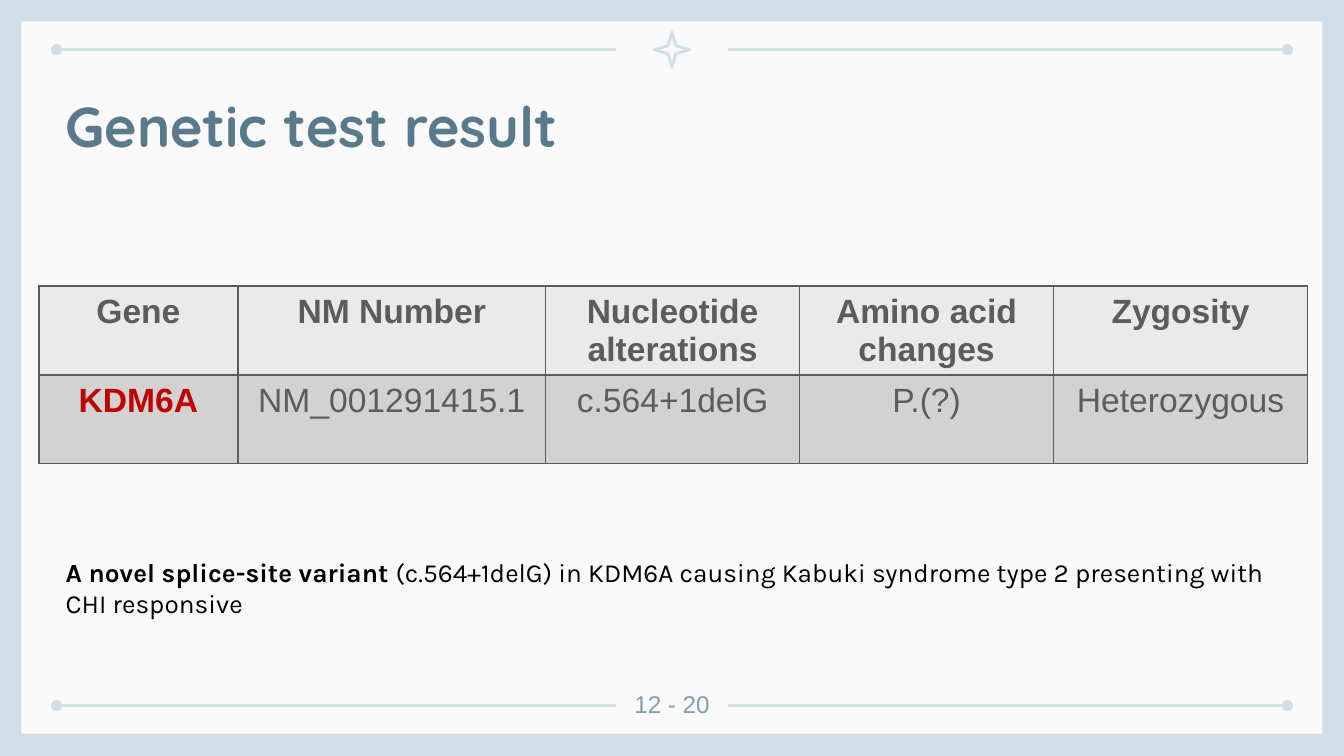
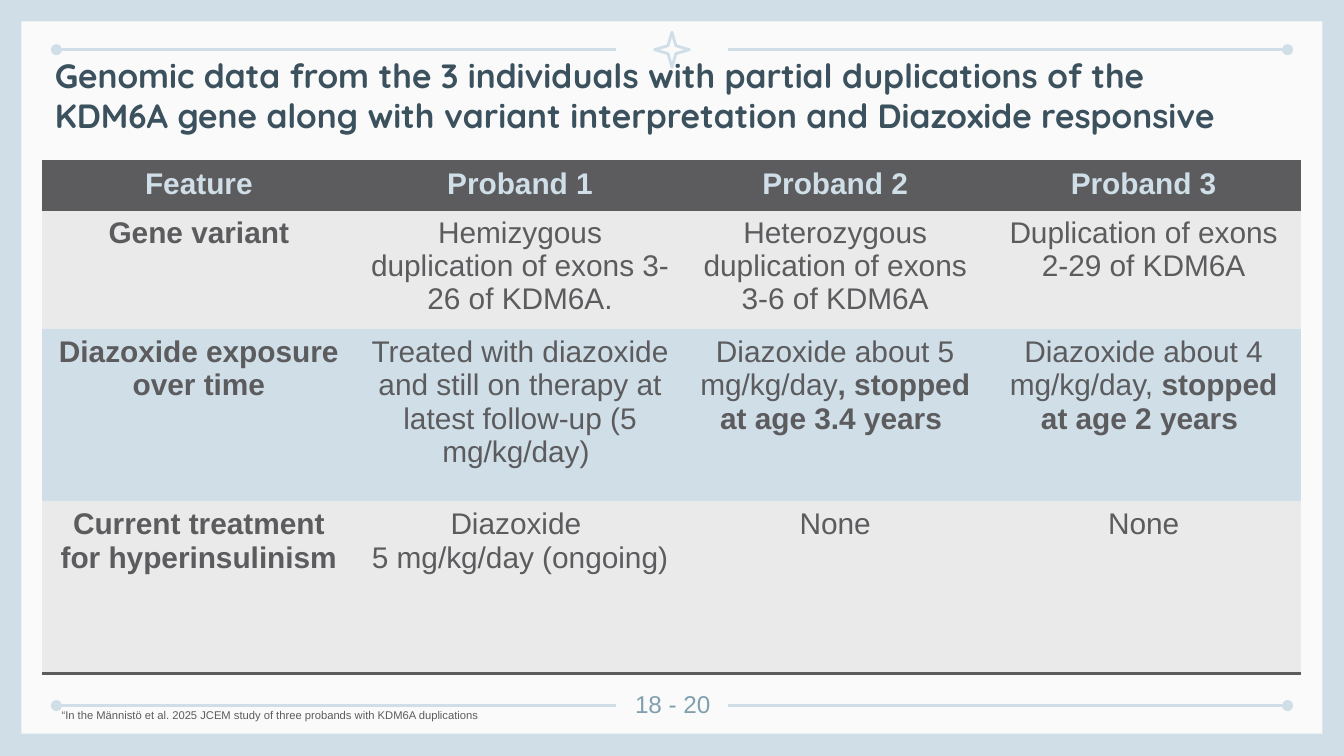
from dataclasses import dataclass
from lxml import etree
from pptx import Presentation
from pptx.dml.color import RGBColor
from pptx.enum.shapes import MSO_CONNECTOR, MSO_SHAPE
from pptx.enum.text import PP_ALIGN
from pptx.oxml.ns import qn
from pptx.util import Pt

LEFT, MID = PP_ALIGN.LEFT, PP_ALIGN.CENTER
LINE = MSO_CONNECTOR.STRAIGHT
RECT, STAR = MSO_SHAPE.RECTANGLE, MSO_SHAPE.STAR_4_POINT
PX = 9144
WIDE = 1000 * PX
NO_STYLE = "{2D5ABB26-0587-4C30-8999-92F81FD0307C}"


@dataclass(frozen=True)
class Theme:
    sky: str = "CFDEE7"
    paper: str = "FAFAFA"
    steel: str = "587A8B"
    navy: str = "3B515D"
    mist: str = "809FAF"
    gray: str = "5C5C5F"
    pale: str = "EAEAEA"
    dim: str = "D2D2D2"
    red: str = "C00000"
    black: str = "000000"
    sans: str = "Arial"
    head: str = "Quicksand"
    body: str = "Karla"
    big: int = 30
    mid: int = 18
    cell: int = 16
    text: int = 14
    page: int = 13
    note: int = 6
    rule: float = 1.5


T = Theme()
rgb = RGBColor.from_string


def write(frame, text, size, ink, font=T.sans, bold=False, align=LEFT):
    frame.word_wrap = True
    for i, line in enumerate(text.split("\n")):
        para = frame.add_paragraph() if i else frame.paragraphs[0]
        para.alignment = align
        for j, part in enumerate(line.split("|")):
            if part:
                run = para.add_run()
                run.text = part
                run.font.size = Pt(size)
                run.font.name = font
                run.font.bold = bold != (j % 2 == 1)
                run.font.color.rgb = rgb(ink)


def grid(slide, x, y, cols, rows, data, fills, inks, size, edges, width):
    box = slide.shapes.add_table(len(rows), len(cols), x * PX, y * PX,
                                 sum(cols) * PX, sum(rows) * PX)
    table = box.table
    table.first_row = table.horz_banding = False
    table._tbl.tblPr.find(qn("a:tableStyleId")).text = NO_STYLE
    for c, wide in enumerate(cols):
        table.columns[c].width = wide * PX
    top, key, rest = inks
    for r, high in enumerate(rows):
        table.rows[r].height = high * PX
        for c, text in enumerate(data[r]):
            cell = table.cell(r, c)
            cell.margin_bottom = 0
            ink = top if r == 0 else key if c == 0 else rest
            write(cell.text_frame, text, size, ink, bold=r == 0 or c == 0, align=MID)
            props = cell._tc.get_or_add_tcPr()
            for side in edges[r]:
                edge = etree.SubElement(props, qn("a:ln" + side), w=str(Pt(width)))
                fill = etree.SubElement(edge, qn("a:solidFill"))
                etree.SubElement(fill, qn("a:srgbClr"), val=T.gray)
            cell.fill.solid()
            cell.fill.fore_color.rgb = rgb(fills[r])


deck = Presentation()
deck.slide_width, deck.slide_height = WIDE, WIDE * 9 // 16
back = deck.slide_master.background.fill
back.solid()
back.fore_color.rgb = rgb(T.sky)

pages = [
    dict(page=("12 - 20", 457, 86),
         title=("Genetic test result", 39, 58, 685, T.big, T.steel),
         table=dict(
             x=29, y=213, cols=[148, 229, 189, 189, 189], rows=[66, 66],
             data=[["Gene", "NM Number", "Nucleotide alterations",
                    "Amino acid changes", "Zygosity"],
                   ["KDM6A", "NM_001291415.1", "c.564+1delG", "P.(?)",
                    "Heterozygous"]],
             fills=[T.pale, T.dim], inks=(T.gray, T.red, T.gray),
             size=T.mid, edges=["LRTB", "LRTB"], width=1),
         note=("|A novel splice-site variant |(c.564+1delG) in KDM6A causing "
               "Kabuki syndrome type 2 presenting with CHI responsive",
               39, 409, 943, 57, T.text, T.black, T.body)),
    dict(page=("18 - 20", 459, 83),
         title=("Genomic data from the 3 individuals with partial duplications "
                "of the KDM6A gene along with variant interpretation and "
                "Diazoxide responsive", 31, 31, 890, T.mid, T.navy),
         table=dict(
             x=31, y=120, cols=[234, 244, 225, 234], rows=[36, 89, 128, 128],
             data=[["Feature", "Proband 1", "Proband 2", "Proband 3"],
                   ["Gene variant",
                    "Hemizygous duplication of exons 3-26 of KDM6A.",
                    "Heterozygous duplication of exons 3-6 of KDM6A",
                    "Duplication of exons 2-29 of KDM6A"],
                   ["Diazoxide exposure over time",
                    "Treated with diazoxide and still on therapy at latest "
                    "follow‑up (5 mg/kg/day) ",
                    "Diazoxide about 5 mg/kg/day|, stopped at age 3.4 years ",
                    "Diazoxide about 4 mg/kg/day, |stopped at age 2 years "],
                   ["Current treatment for hyperinsulinism",
                    "Diazoxide \n5 mg/kg/day (ongoing)", "None", "None"]],
             fills=[T.gray, T.pale, T.sky, T.pale],
             inks=(T.sky, T.gray, T.gray),
             size=T.cell, edges=["TB", "", "", "B"], width=2),
         note=("“In the Männistö et al. 2025 JCEM study of three probands "
               "with KDM6A duplications",
               36, 522, 750, 20, T.note, T.gray, T.sans)),
]

for item in pages:
    slide = deck.slides.add_slide(deck.slide_layouts[6])
    shapes = slide.shapes

    sheet = shapes.add_shape(RECT, 16 * PX, 16 * PX, 968 * PX, 530 * PX)
    sheet.shadow.inherit = False
    sheet.fill.solid()
    sheet.fill.fore_color.rgb = rgb(T.paper)
    sheet.line.fill.background()

    for y in (37, 525):
        for x, end, tip in ((42, 458, "headEnd"), (542, 958, "tailEnd")):
            rule = shapes.add_connector(LINE, x * PX, y * PX, end * PX, y * PX)
            rule.line.color.rgb = rgb(T.sky)
            rule.line.width = Pt(T.rule)
            etree.SubElement(rule.line._get_or_add_ln(), qn("a:" + tip), type="oval")
            etree.SubElement(rule._element.spPr, qn("a:effectLst"))

    star = shapes.add_shape(STAR, 487 * PX, 24 * PX, 26 * PX, 26 * PX)
    star.adjustments[0] = 0.16
    star.shadow.inherit = False
    star.fill.background()
    star.line.color.rgb = rgb(T.sky)
    star.line.width = Pt(T.rule)

    text, x, wide = item["page"]
    name, left, top, span, size, ink = item["title"]
    for words, at, look in (
            (text, (x, 503, wide, 36), dict(size=T.page, ink=T.mist, align=MID)),
            (name, (left, top, span, 63),
             dict(size=size, ink=ink, font=T.head, bold=True))):
        frame = shapes.add_textbox(*(n * PX for n in at)).text_frame
        frame.margin_top = frame.margin_bottom = 10 * PX
        frame.margin_left = frame.margin_right = 10 * PX
        write(frame, words, **look)

    grid(slide, **item["table"])

    words, *at, size, ink, font = item["note"]
    frame = shapes.add_textbox(*(n * PX for n in at)).text_frame
    write(frame, words, size, ink, font)

deck.save("out.pptx")
